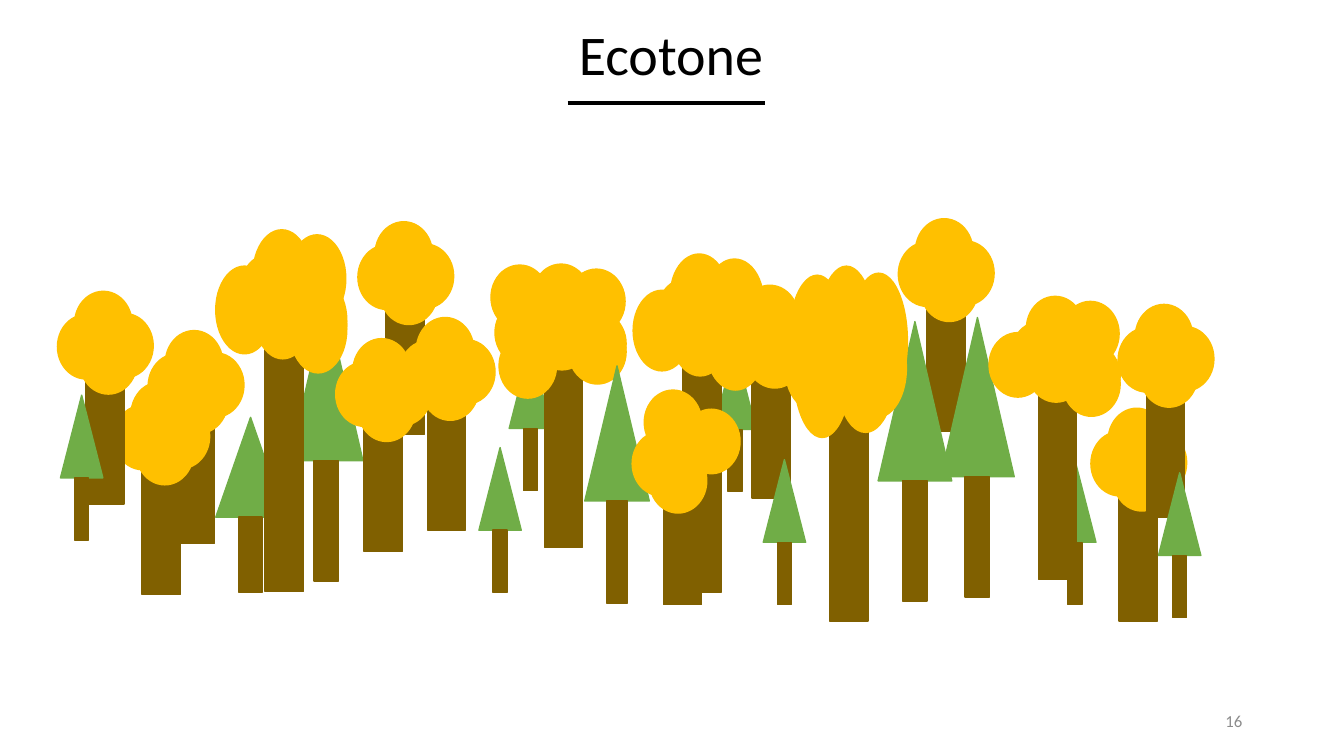
"""Build the Ecotone slide: a mixed stand of pines and broadleaf trees."""
from dataclasses import dataclass

from pptx import Presentation
from pptx.dml.color import RGBColor
from pptx.enum.shapes import MSO_CONNECTOR as Connector, MSO_SHAPE as Preset
from pptx.enum.text import MSO_ANCHOR as Anchor, MSO_AUTO_SIZE as AutoSize, PP_ALIGN as Align
from pptx.oxml.ns import qn
from pptx.util import Inches, Pt
from lxml.etree import SubElement

TITLE = "Ecotone"
PAGE_NUMBER = "16"
TITLE_BOX = (5.64, 0.14, 2.06, 0.77)
NUMBER_BOX = (9.42, 6.95, 3, 0.4)
UNDERLINE = (5.63, 1.02, 7.59, 1.02)

SMALL, TALL, MEDIUM, SQUAT = (0.42, 0.82), (0.73, 1.58), (0.64, 1.34), (0.69, 0.99)
TRUNK_WIDTH, LEAF_WIDTH, LEAF_HEIGHT = 0.38, 0.57, 0.64
PINE_TRUNK_WIDTH_RATIO, PINE_TRUNK_HEIGHT_RATIO = 1 / 3, 0.755

OAK_LEAVES = [(0, 0), (0.16, 0.16), (0.33, -0.04), (0.15, -0.25),
              (0.5, -0.2), (0.51, 0.22), (-0.22, 0.11), (0.51, 0.3)]
BROADLEAF = {
    "maple": ((0.28, 0.53), [(0, 0), (0.17, -0.23), (0.22, 0.15), (0.38, -0.01)]),
    "oak": ((0.27, 0.32), OAK_LEAVES),
    "full oak": ((0.27, 0.32), OAK_LEAVES + [(-0.18, 0.44), (-0.26, -0.24)]),
    "sapling": ((0.31, 0.37), [(0.17, 0.17), (0.12, -0.41), (0.5, -0.22), (0, 0)]),
    "poplar": ((0.36, 0.32), [(0, 0, 1.35), (0.43, 0.17, 1.13), (0.24, -0.35, 1.35),
                              (0.56, -0.28, 1.35), (0.55, 0.17, 0.98),
                              (-0.08, 0.27, 0.81), (-0.05, -0.26, 1.35)]),
}

FOREST = [
    ("pine", 5.05, 3.43, SMALL),
    ("pine", 7.08, 3.44, SMALL),
    ("pine", 10.45, 4.56, SMALL),
    ("maple", 7.18, 3.06),
    ("maple", 3.55, 2.43),
    ("maple", 8.91, 2.4),
    ("oak", 6.5, 2.77, 0.8, 2.79),
    ("pine", 8.71, 3.19, TALL),
    ("pine", 2.87, 2.99, TALL),
    ("maple", 3.96, 3.38),
    ("full oak", 5.13, 2.87, LEAF_HEIGHT, 2.24),
    ("pine", 4.75, 4.44, SMALL),
    ("pine", 5.8, 3.63, MEDIUM),
    ("sapling", 6.27, 4.28),
    ("pine", 7.57, 4.56, SMALL),
    ("poplar", 7.87, 2.99, LEAF_HEIGHT, 2.85),
    ("pine", 9.33, 3.15, TALL),
    ("pine", 2.14, 4.14, SQUAT),
    ("oak", 10.03, 3.19, LEAF_HEIGHT, 2.24),
    ("oak", 2.36, 2.53, 0.87, 3.02),
    ("maple", 1.47, 3.51),
    ("maple", 1.13, 4.02),
    ("maple", 0.57, 3.12),
    ("maple", 3.33, 3.59),
    ("maple", 10.82, 4.28),
    ("maple", 11.09, 3.25),
    ("pine", 0.6, 3.92, SMALL),
    ("pine", 11.49, 4.69, SMALL),
]


@dataclass(frozen=True)
class Theme:
    """Colours, font and sizes of the slide."""
    needles: RGBColor = RGBColor.from_string("70AD47")
    bark: RGBColor = RGBColor.from_string("806000")
    leaves: RGBColor = RGBColor.from_string("FFC000")
    ink: RGBColor = RGBColor.from_string("000000")
    muted: RGBColor = RGBColor.from_string("8C8C8C")
    font: str = "Calibri"
    title_size: Pt = Pt(40)
    number_size: Pt = Pt(12)
    outline: Pt = Pt(1)
    rule: Pt = Pt(3)


THEME = Theme()


def draw(slide, preset, color, *box):
    """Add one flat shape with a matching outline."""
    shape = slide.shapes.add_shape(preset, *map(Inches, box))
    shape.shadow.inherit = False
    shape.fill.solid()
    shape.fill.fore_color.rgb = color
    shape.line.color.rgb = color
    shape.line.width = THEME.outline


def draw_pine(slide, x, y, size):
    """Draw a triangular tree on a centred trunk."""
    width, height = size
    trunk_width = width * PINE_TRUNK_WIDTH_RATIO
    draw(slide, Preset.ISOSCELES_TRIANGLE, THEME.needles, x, y, width, height)
    draw(slide, Preset.RECTANGLE, THEME.bark, x + (width - trunk_width) / 2, y + height,
         trunk_width, height * PINE_TRUNK_HEIGHT_RATIO)


def draw_broadleaf(slide, kind, x, y, leaf_height=LEAF_HEIGHT, trunk_height=1.35):
    """Draw a trunk and the cluster of leaves over it."""
    (trunk_dx, trunk_dy), leaves = BROADLEAF[kind]
    draw(slide, Preset.RECTANGLE, THEME.bark, x + trunk_dx, y + trunk_dy,
         TRUNK_WIDTH, trunk_height)
    for dx, dy, *own_height in leaves:
        height = own_height[0] if own_height else leaf_height
        draw(slide, Preset.OVAL, THEME.leaves, x + dx, y + dy, LEAF_WIDTH, height)


def write(shape, text, size, color, align, anchor, wrap):
    """Fill a text shape with one formatted run."""
    frame = shape.text_frame
    frame.auto_size = AutoSize.NONE
    frame.word_wrap = wrap
    frame.vertical_anchor = anchor
    paragraph = frame.paragraphs[0]
    paragraph.alignment = align
    run = paragraph.add_run()
    run.text = text
    run.font.name = THEME.font
    run.font.size = size
    run.font.color.rgb = color


def draw_heading(slide):
    """Place the title and the rule below it."""
    title = slide.shapes.title
    title.left, title.top, title.width, title.height = map(Inches, TITLE_BOX)
    write(title, TITLE, THEME.title_size, THEME.ink, Align.LEFT, Anchor.TOP, False)
    rule = slide.shapes.add_connector(Connector.STRAIGHT, *map(Inches, UNDERLINE))
    rule.line.color.rgb = THEME.ink
    rule.line.width = THEME.rule
    SubElement(rule._element.spPr, qn("a:effectLst"))


def main():
    """Build and save the presentation."""
    presentation = Presentation()
    presentation.slide_width, presentation.slide_height = Inches(13.33), Inches(7.5)
    slide = presentation.slides.add_slide(presentation.slide_layouts[5])
    draw_heading(slide)
    for kind, *details in FOREST:
        if kind == "pine":
            draw_pine(slide, *details)
        else:
            draw_broadleaf(slide, kind, *details)
    number = slide.shapes.add_textbox(*map(Inches, NUMBER_BOX))
    write(number, PAGE_NUMBER, THEME.number_size, THEME.muted, Align.RIGHT, Anchor.MIDDLE, True)
    presentation.save("out.pptx")


if __name__ == "__main__":
    main()
